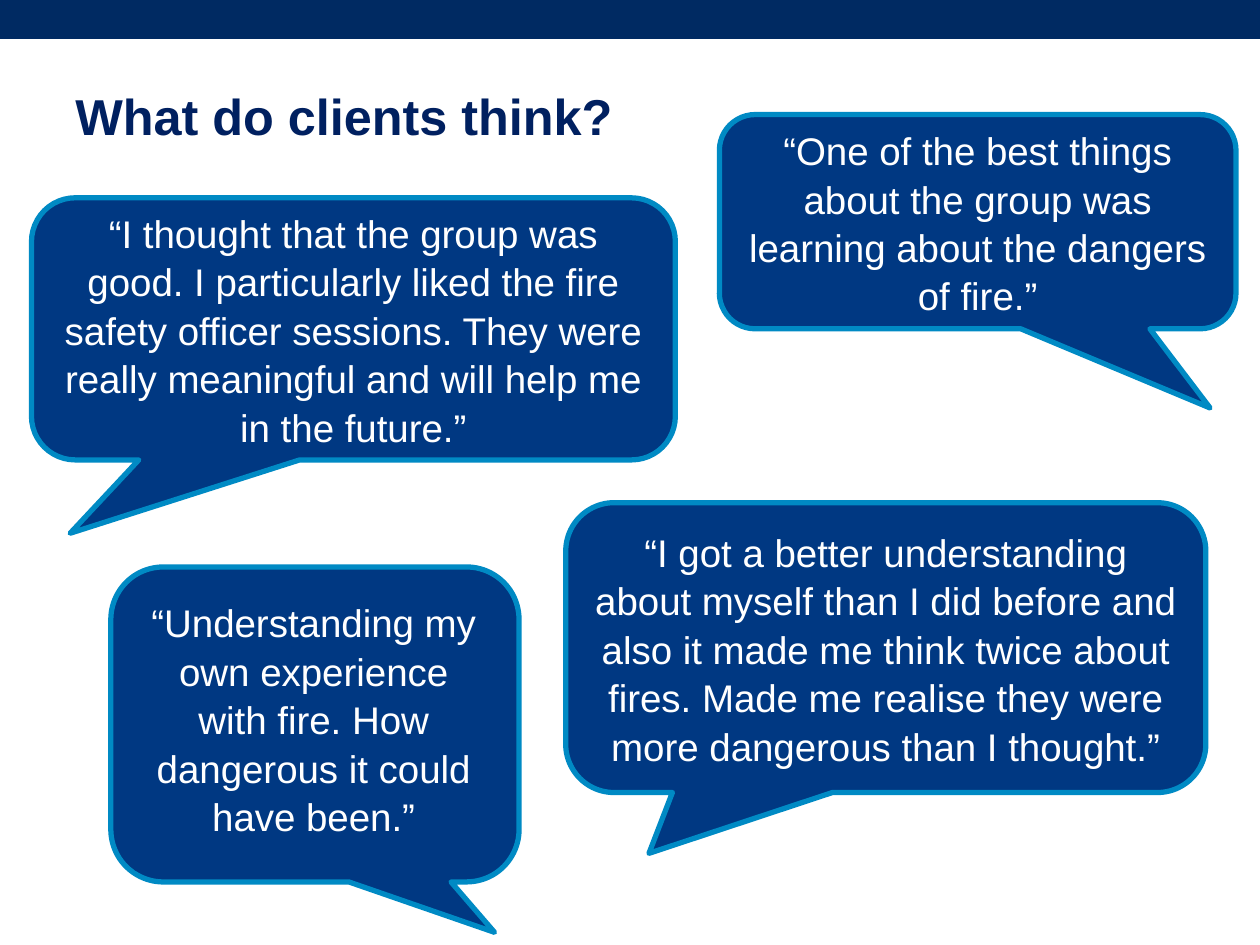
from dataclasses import dataclass

from pptx import Presentation
from pptx.dml.color import RGBColor
from pptx.enum.shapes import MSO_SHAPE
from pptx.enum.text import MSO_ANCHOR, PP_ALIGN
from pptx.util import Inches, Pt


@dataclass(frozen=True)
class Theme:
    font: str = "Arial"
    banner: RGBColor = RGBColor(0x00, 0x2A, 0x62)
    title: RGBColor = RGBColor(0x00, 0x20, 0x60)
    bubble: RGBColor = RGBColor(0x00, 0x38, 0x82)
    outline: RGBColor = RGBColor(0x00, 0x8A, 0xC4)
    quote: RGBColor = RGBColor(0xFF, 0xFF, 0xFF)
    title_size: float = 28.8
    quote_size: float = 22
    quote_spacing: float = 1.05
    outline_width: float = 3


@dataclass(frozen=True)
class Area:
    left: float
    top: float
    width: float
    height: float

    def lengths(self) -> tuple:
        return tuple(map(Inches, (self.left, self.top, self.width, self.height)))


@dataclass(frozen=True)
class Bubble:
    area: Area
    tail_x: float
    tail_y: float
    quote: str
    text_area: Area | None = None


THEME = Theme()
BUBBLES = [
    Bubble(Area(5.71, 0.91, 4.1, 1.7), 0.45, 0.87,
           "“One of the best things about the group was learning about the dangers of fire.”"),
    Bubble(Area(4.49, 3.99, 5.08, 2.3), -0.37, 0.71,
           "“I got a better understanding about myself than I did before and also it made me "
           "think twice about fires. Made me realise they were more dangerous than I thought.”"),
    Bubble(Area(0.25, 1.57, 5.11, 2.08), -0.44, 0.78,
           "“I thought that the group was good. I particularly liked the fire safety officer "
           "sessions. They were really meaningful and will help me in the future.”"),
    Bubble(Area(0.88, 4.5, 3.24, 2.5), 0.44, 0.66,
           "“Understanding my own experience with fire. How dangerous it could have been.”",
           Area(1.07, 4.69, 2.84, 2.22)),
]


def add_filled_shape(page, kind: MSO_SHAPE, area: Area, color: RGBColor):
    shape = page.shapes.add_shape(kind, *area.lengths())
    shape.shadow.inherit = False
    shape.fill.solid()
    shape.fill.fore_color.rgb = color
    shape.line.fill.background()
    return shape


def write_text(box, text: str, size: float, color: RGBColor, bold: bool = False):
    frame = box.text_frame
    frame.word_wrap = True
    frame.vertical_anchor = MSO_ANCHOR.MIDDLE
    para = frame.paragraphs[0]
    para.text = text
    para.font.name = THEME.font
    para.font.size = Pt(size)
    para.font.bold = bold
    para.font.color.rgb = color
    return para


def add_title(page, text: str) -> None:
    box = page.shapes.add_textbox(*Area(0.5, 0.6, 9.07, 0.63).lengths())
    write_text(box, text, THEME.title_size, THEME.title, bold=True)


def add_bubble(page, bubble: Bubble) -> None:
    callout = add_filled_shape(
        page, MSO_SHAPE.ROUNDED_RECTANGULAR_CALLOUT, bubble.area, THEME.bubble)
    callout.adjustments[0] = bubble.tail_x
    callout.adjustments[1] = bubble.tail_y
    callout.line.color.rgb = THEME.outline
    callout.line.width = Pt(THEME.outline_width)
    box = callout
    if bubble.text_area:
        box = add_filled_shape(page, MSO_SHAPE.RECTANGLE, bubble.text_area, THEME.bubble)
    para = write_text(box, bubble.quote, THEME.quote_size, THEME.quote)
    para.alignment = PP_ALIGN.CENTER
    para.line_spacing = THEME.quote_spacing
    if bubble.text_area:
        box.text_frame.vertical_anchor = MSO_ANCHOR.TOP


def main() -> None:
    deck = Presentation()
    deck.slide_width = Inches(10)
    deck.slide_height = Inches(7.5)
    page = deck.slides.add_slide(deck.slide_layouts[6])
    add_filled_shape(page, MSO_SHAPE.RECTANGLE, Area(0, 0, 10, 0.31), THEME.banner)
    add_title(page, "What do clients think?")
    for bubble in BUBBLES:
        add_bubble(page, bubble)
    deck.save("out.pptx")


if __name__ == "__main__":
    main()
